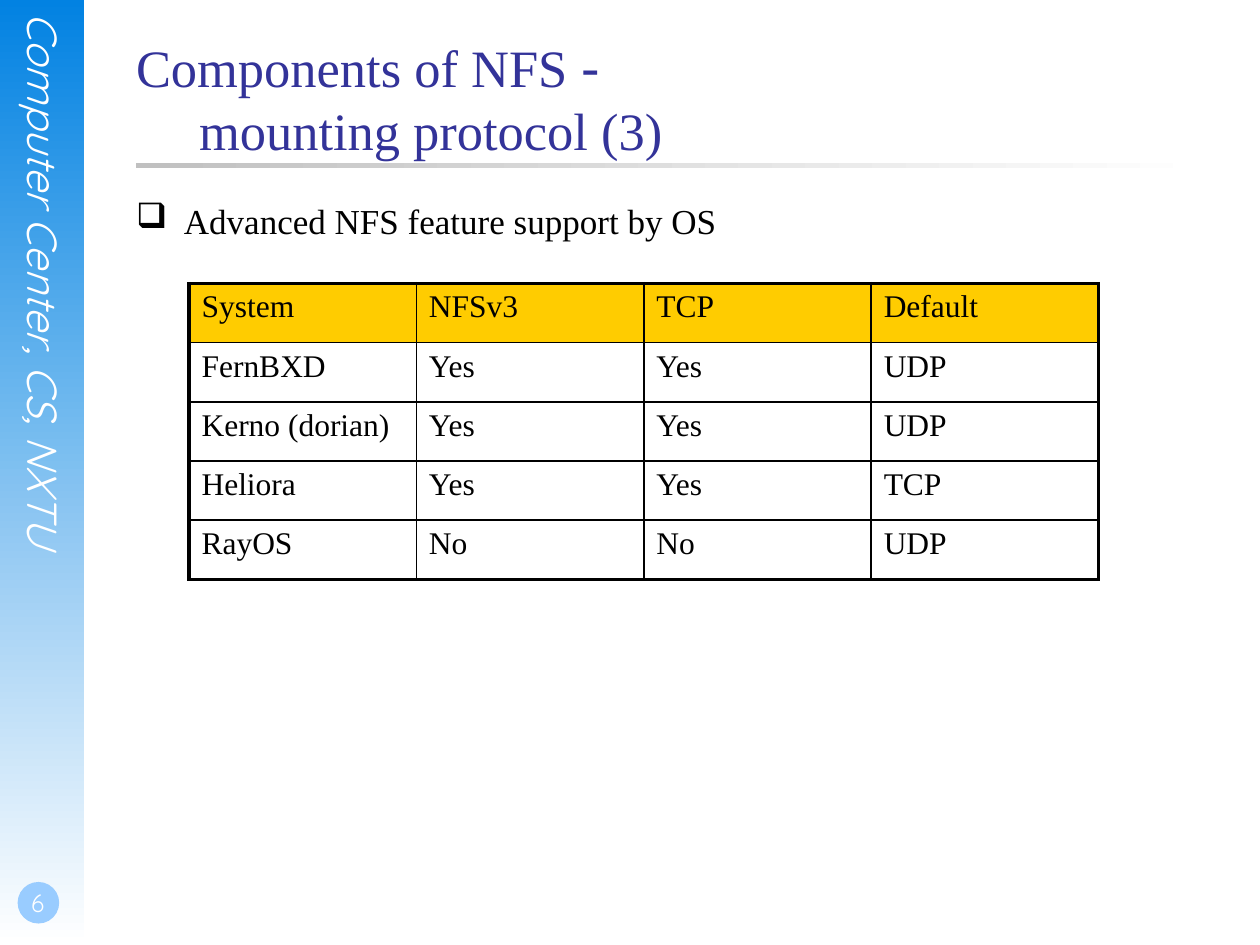
import dataclasses

import pptx
import pptx.dml.color
import pptx.enum.shapes
import pptx.enum.text
import pptx.oxml
import pptx.oxml.ns
import pptx.util
from pptx.util import Inches, Pt


@dataclasses.dataclass(frozen=True)
class Theme:
    serif: str = "Times New Roman"
    symbol: str = "DejaVu Sans"
    display: str = "Quicksand"
    white: str = "FFFFFF"
    black: str = "000000"
    title: str = "333399"
    header: str = "FFCC00"
    sidebar: str = "0282E2"
    badge: str = "99CCFF"
    rule: str = "C0C0C0"
    title_size: int = 30
    sidebar_size: int = 24
    body_size: int = 20
    table_size: int = 18
    number_size: int = 14
    thin: float = 1
    thick: float = 2.25


THEME = Theme()
FEATURES = [
    ["System", "NFSv3", "TCP", "Default"],
    ["FernBXD", "Yes", "Yes", "UDP"],
    ["Kerno (dorian)", "Yes", "Yes", "UDP"],
    ["Heliora", "Yes", "Yes", "TCP"],
    ["RayOS", "No", "No", "UDP"],
]


def rgb(color):
    return pptx.dml.color.RGBColor.from_string(color)


def add_run(paragraph, text, size, color, name, **extra):
    run = paragraph.add_run()
    run.text = text
    for attribute, value in {"size": Pt(size), "name": name, **extra}.items():
        setattr(run.font, attribute, value)
    run.font.color.rgb = rgb(color)


def add_text_frame(slide, box, **extra):
    """Add a wrapping text box without margins and return its frame."""
    frame = slide.shapes.add_textbox(*box).text_frame
    settings = {"word_wrap": True, "margin_left": 0, "margin_top": 0,
                "margin_right": 0, "margin_bottom": 0, **extra}
    for attribute, value in settings.items():
        setattr(frame, attribute, value)
    return frame


def add_panel(slide, kind, box, colors, angle=0):
    """Add a borderless shape; two colours make a gradient."""
    panel = slide.shapes.add_shape(kind, *box)
    panel.shadow.inherit = False
    panel.line.fill.background()
    if len(colors) == 1:
        panel.fill.solid()
        panel.fill.fore_color.rgb = rgb(colors[0])
        return
    panel.fill.gradient()
    panel.fill.gradient_angle = angle
    for stop, position, color in zip(panel.fill.gradient_stops, (0, 1), colors):
        stop.position = position
        stop.color.rgb = rgb(color)


def build_sidebar(slide, left, top, width, height):
    shapes = pptx.enum.shapes.MSO_SHAPE
    add_panel(slide, shapes.RECTANGLE, (left, top, width, height),
              (THEME.sidebar, THEME.white), angle=270)

    label = add_text_frame(slide, (left + Inches(0.15), top + Inches(0.1),
                                   Inches(0.4), Inches(5.11)))
    label._txBody.bodyPr.set("vert", "eaVert")
    add_run(label.paragraphs[0], "Computer Center, CS, NXTU", THEME.sidebar_size,
            THEME.white, THEME.display, italic=True)

    bottom = top + height
    badge = Inches(0.33)
    add_panel(slide, shapes.OVAL,
              (left + Inches(0.14), bottom - Inches(0.5), badge, badge), (THEME.badge,))
    number = add_text_frame(
        slide, (left, bottom - Inches(0.67), Inches(0.58), Inches(0.5)),
        vertical_anchor=pptx.enum.text.MSO_ANCHOR.BOTTOM,
        margin_left=Inches(0.02), margin_bottom=Inches(0.05))
    number.paragraphs[0].alignment = pptx.enum.text.PP_ALIGN.CENTER
    add_run(number.paragraphs[0], "6", THEME.number_size, THEME.white, THEME.display)


def build_title(slide, left, top, width, height):
    add_panel(slide, pptx.enum.shapes.MSO_SHAPE.RECTANGLE,
              (left, top + Inches(1.01), width, Inches(0.04)),
              (THEME.rule, THEME.white))
    heading = add_text_frame(slide, (left, top, width, height)).paragraphs[0]
    style = (THEME.title_size, THEME.title)
    add_run(heading, "Components of NFS ", *style, THEME.serif)
    add_run(heading, "-", *style, THEME.symbol)
    heading.add_line_break()
    add_run(heading, "\tmounting protocol (3)", *style, THEME.serif)


def build_body(slide, left, top, width, height):
    point = add_text_frame(slide, (left, top, width, height)).paragraphs[0]
    point.space_before = Pt(THEME.body_size / 4)
    properties = point._p.get_or_add_pPr()
    indent = Inches(0.38)
    properties.set("marL", str(indent))
    properties.set("indent", str(-indent))
    bullet = pptx.oxml.parse_xml(
        f'<a:buChar {pptx.oxml.ns.nsdecls("a")} char="❑"/>')
    properties.append(bullet)
    add_run(point, "Advanced NFS feature support by OS", THEME.body_size,
            THEME.black, THEME.serif)


def set_borders(cell, weights):
    """Draw the cell's sides, given as a dict of side to width in points."""
    properties = cell._tc.get_or_add_tcPr()
    for index, side in enumerate("LRTB"):
        border = pptx.oxml.parse_xml(
            f'<a:ln{side} {pptx.oxml.ns.nsdecls("a")} w="{Pt(weights[side])}">'
            f'<a:solidFill><a:srgbClr val="{THEME.black}"/></a:solidFill></a:ln{side}>')
        properties.insert(index, border)


def build_table(slide, left, top, width, height):
    rows, columns = len(FEATURES), len(FEATURES[0])
    table = slide.shapes.add_table(rows, columns, left, top, width, height).table
    table.horz_banding = False
    for r, values in enumerate(FEATURES):
        for c, value in enumerate(values):
            cell = table.cell(r, c)
            if r == 0:
                cell.fill.solid()
                cell.fill.fore_color.rgb = rgb(THEME.header)
            else:
                cell.fill.background()
            outer = {"L": c == 0, "R": c == columns - 1,
                     "T": r == 0, "B": r == rows - 1}
            set_borders(cell, {side: THEME.thick if edge else THEME.thin
                               for side, edge in outer.items()})
            paragraph = cell.text_frame.paragraphs[0]
            paragraph.space_before = Pt(THEME.table_size / 4)
            add_run(paragraph, value, THEME.table_size, THEME.black,
                    THEME.serif, bold=False)


def main():
    presentation = pptx.Presentation()
    presentation.slide_width, presentation.slide_height = Inches(10), Inches(7.5)
    slide = presentation.slides.add_slide(presentation.slide_layouts[6])
    content_left, content_width = Inches(1.08), Inches(8.5)
    build_sidebar(slide, 0, 0, Inches(0.67), presentation.slide_height)
    build_title(slide, content_left, Inches(0.28), content_width, Inches(1.25))
    build_body(slide, content_left, Inches(1.58), content_width, Inches(5.08))
    build_table(slide, Inches(1.5), Inches(2.25), Inches(7.22), Inches(2.35))
    presentation.save("out.pptx")


if __name__ == "__main__":
    main()
